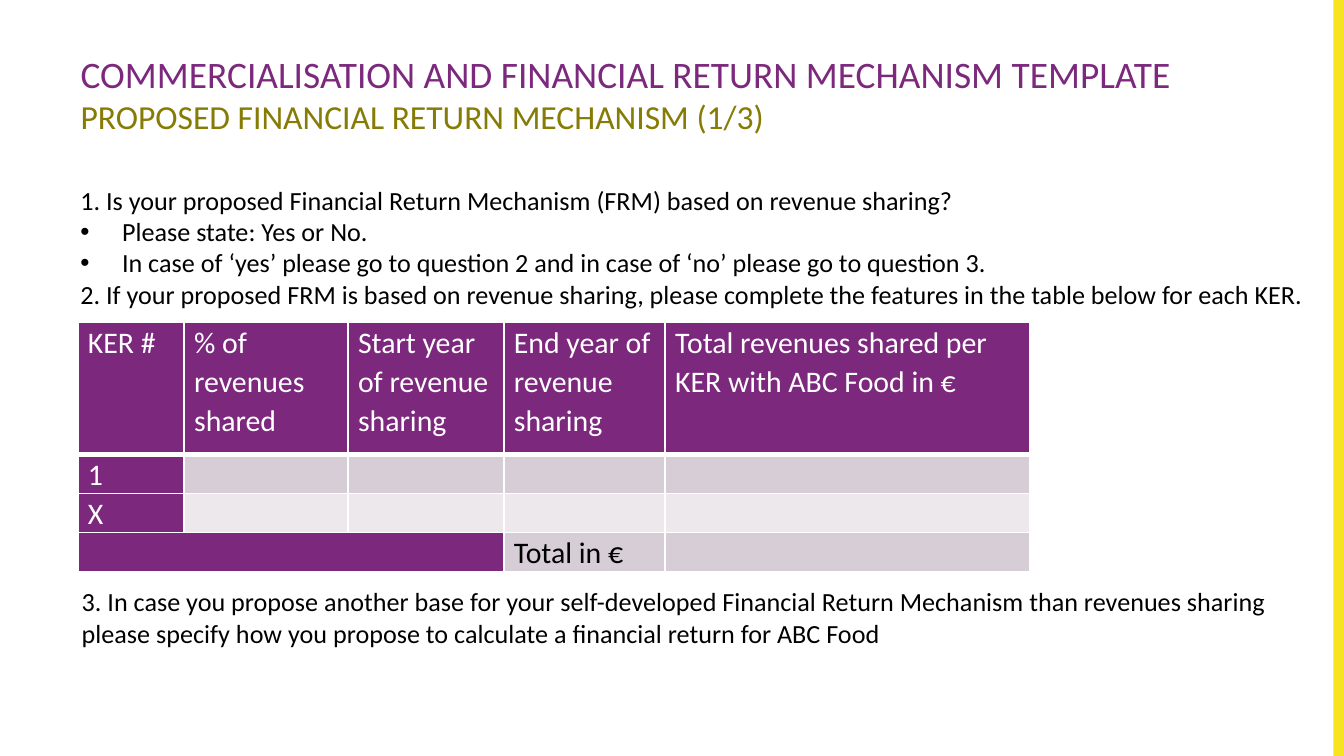
from dataclasses import dataclass

import pptx
import pptx.dml.color
import pptx.enum.shapes
import pptx.enum.text
import pptx.oxml
import pptx.oxml.ns
import pptx.util
from pptx.util import Inches

SLIDE_WIDTH = 10
SLIDE_HEIGHT = SLIDE_WIDTH * 9 / 16


@dataclass(frozen=True)
class Theme:
    font: str = "Calibri"
    purple: str = "7C287D"
    olive: str = "867B05"
    yellow: str = "F6E421"
    band_dark: str = "D7CDD7"
    band_light: str = "ECE8EC"
    black: str = "000000"
    white: str = "FFFFFF"
    title_size: int = 20
    subtitle_size: int = 18
    table_size: int = 16
    body_size: int = 14


def rgb(value):
    return pptx.dml.color.RGBColor.from_string(value)


class SlideBuilder:
    def __init__(self, presentation, theme):
        self.theme = theme
        self.slide = presentation.slides.add_slide(presentation.slide_layouts[5])

    def format_run(self, run, size, color):
        run.font.name = self.theme.font
        run.font.size = pptx.util.Pt(size)
        run.font.color.rgb = rgb(color)

    def add_bar(self, left, top, width, height, color):
        shape = self.slide.shapes.add_shape(
            pptx.enum.shapes.MSO_SHAPE.RECTANGLE,
            Inches(left), Inches(top), Inches(width), Inches(height))
        shape.shadow.inherit = False
        shape.fill.solid()
        shape.fill.fore_color.rgb = rgb(color)
        shape.line.fill.background()

    def set_title(self, left, top, width, height, title, subtitle):
        shape = self.slide.shapes.title
        shape.left, shape.top = Inches(left), Inches(top)
        shape.width, shape.height = Inches(width), Inches(height)
        frame = shape.text_frame
        frame.auto_size = pptx.enum.text.MSO_AUTO_SIZE.NONE
        frame.vertical_anchor = pptx.enum.text.MSO_ANCHOR.MIDDLE
        paragraph = frame.paragraphs[0]
        paragraph.text = f"{title}\v{subtitle}"
        paragraph.alignment = pptx.enum.text.PP_ALIGN.LEFT
        title_run, subtitle_run = paragraph.runs
        self.format_run(title_run, self.theme.title_size, self.theme.purple)
        self.format_run(subtitle_run, self.theme.subtitle_size, self.theme.olive)

    def add_text(self, left, top, width, height, lines):
        """Lines that start with a bullet sign become list items."""
        box = self.slide.shapes.add_textbox(
            Inches(left), Inches(top), Inches(width), Inches(height))
        frame = box.text_frame
        frame.word_wrap = True
        frame.text = "\n".join(line.removeprefix("• ") for line in lines)
        for paragraph, line in zip(frame.paragraphs, lines):
            if line.startswith("• "):
                self.add_bullet(paragraph)
            self.format_run(paragraph.runs[0], self.theme.body_size, self.theme.black)

    def add_bullet(self, paragraph):
        properties = paragraph._p.get_or_add_pPr()
        indent = Inches(0.31)
        properties.set("marL", str(indent))
        properties.set("indent", str(-indent))
        properties.append(pptx.oxml.parse_xml(
            f'<a:buFont {pptx.oxml.ns.nsdecls("a")} typeface="Arial"/>'))
        properties.append(pptx.oxml.parse_xml(
            f'<a:buChar {pptx.oxml.ns.nsdecls("a")} char="•"/>'))

    def add_table(self, left, top, widths, heights, rows):
        table = self.slide.shapes.add_table(
            len(heights), len(widths), Inches(left), Inches(top),
            Inches(sum(widths)), Inches(sum(heights))).table
        table.first_row = table.horz_banding = False
        for column, width in zip(table.columns, widths):
            column.width = Inches(width)
        for row, height in zip(table.rows, heights):
            row.height = Inches(height)
        for row_index, texts in enumerate(rows):
            for column_index, text in enumerate(texts):
                self.format_cell(table.cell(row_index, column_index), text,
                                 row_index, column_index)
        return table

    def format_cell(self, cell, text, row_index, column_index):
        theme = self.theme
        is_header = row_index == 0 or column_index == 0
        cell.margin_left = cell.margin_right = pptx.util.Pt(5.4)
        cell.margin_top = cell.margin_bottom = 0
        cell.text = text
        paragraph = cell.text_frame.paragraphs[0]
        paragraph.line_spacing = 1.07
        paragraph.space_after = pptx.util.Pt(8)
        for run in paragraph.runs:
            self.format_run(run, theme.table_size,
                            theme.white if is_header else theme.black)
        # Empty cells need the type size too, or they stretch their row
        paragraph._p.append(pptx.oxml.parse_xml(
            f'<a:endParaRPr {pptx.oxml.ns.nsdecls("a")} sz="{theme.table_size * 100}"/>'))
        band = theme.band_dark if row_index % 2 else theme.band_light
        cell.fill.solid()
        cell.fill.fore_color.rgb = rgb(theme.purple if is_header else band)
        # White borders, thicker under the heading row
        borders = {"lnL": 1, "lnR": 1,
                   "lnT": 3 if row_index == 1 else 1,
                   "lnB": 3 if row_index == 0 else 1}
        for position, (tag, width) in enumerate(borders.items()):
            cell._tc.get_or_add_tcPr().insert(position, pptx.oxml.parse_xml(
                f'<a:{tag} {pptx.oxml.ns.nsdecls("a")} w="{pptx.util.Pt(width)}">'
                f'<a:solidFill><a:srgbClr val="{theme.white}"/></a:solidFill></a:{tag}>'))


def main():
    presentation = pptx.Presentation()
    presentation.slide_width = Inches(SLIDE_WIDTH)
    presentation.slide_height = Inches(SLIDE_HEIGHT)
    theme = Theme()
    builder = SlideBuilder(presentation, theme)

    # Side bar and title
    builder.add_bar(9.92, 0, 0.08, SLIDE_HEIGHT, theme.yellow)
    builder.set_title(0.5, 0.23, 9.22, 0.94,
                      "COMMERCIALISATION AND FINANCIAL RETURN MECHANISM TEMPLATE",
                      "PROPOSED FINANCIAL RETURN MECHANISM (1/3)")

    # Revenue sharing table
    table = builder.add_table(
        0.58, 2.4, [0.79, 1.22, 1.16, 1.2, 2.71], [0.98, 0.29, 0.29, 0.29],
        [["KER #", "% of revenues shared", "Start year of revenue sharing",
          "End year of revenue sharing",
          "Total revenues shared per KER with ABC Food in €"],
         ["1", "", "", "", ""],
         ["X", "", "", "", ""],
         ["", "", "", "Total in €", ""]])
    table.cell(3, 0).merge(table.cell(3, 2))

    # Questions above and below the table
    builder.add_text(0.5, 1.32, 9.43, 1.35, [
        "1. Is your proposed Financial Return Mechanism (FRM) based on revenue sharing?",
        "• Please state: Yes or No.",
        "• In case of ‘yes’ please go to question 2 and in case of ‘no’ please go to question 3.",
        "2. If your proposed FRM is based on revenue sharing, please complete the features "
        "in the table below for each KER."])
    builder.add_text(0.51, 4.31, 9.07, 0.57, [
        "3. In case you propose another base for your self-developed Financial Return "
        "Mechanism than revenues sharing please specify how you propose to calculate "
        "a financial return for ABC Food"])

    presentation.save("out.pptx")


if __name__ == "__main__":
    main()
